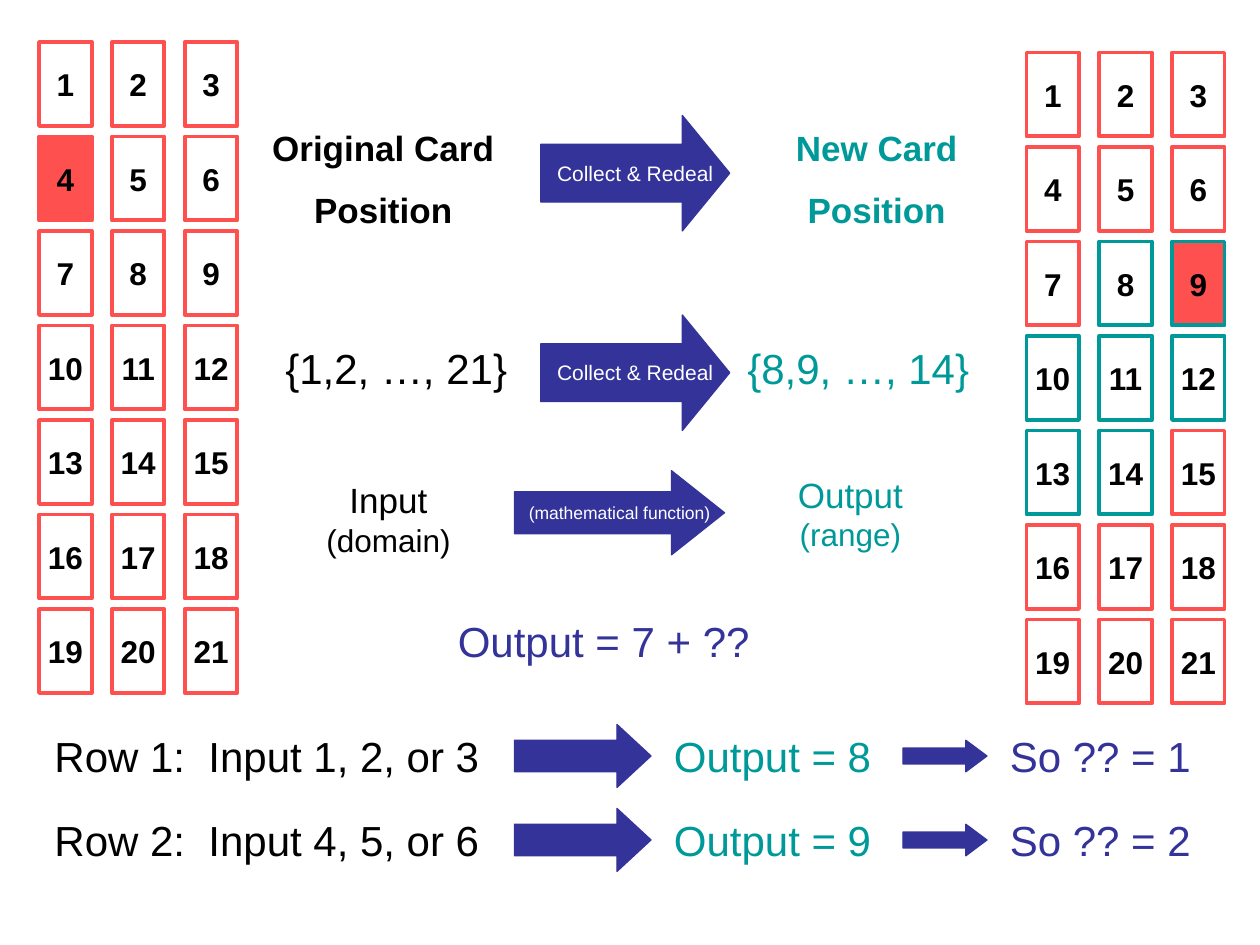
from pptx import Presentation
from pptx.dml.color import RGBColor
from pptx.enum import shapes, text
from pptx.util import Pt

BLACK, WHITE = "000000", "FFFFFF"
RED, TEAL, INDIGO = "FF5050", "009999", "333399"
LEFT, CENTER = text.PP_ALIGN.LEFT, text.PP_ALIGN.CENTER


def color(value):
    return RGBColor.from_string(value)


class Board:
    """Draws styled elements on one slide; all lengths are in points."""

    font = "Arial"
    card_width, card_height = 30, 48
    column_step, row_step = 41.6, 54

    def __init__(self, slide):
        self.slide = slide

    def shape(self, kind, left, top, width, height, fill, line, line_width):
        item = self.slide.shapes.add_shape(
            kind, Pt(left), Pt(top), Pt(width), Pt(height))
        item.shadow.inherit = False
        if fill:
            item.fill.solid()
            item.fill.fore_color.rgb = color(fill)
        else:
            item.fill.background()
        item.line.color.rgb = color(line)
        item.line.width = Pt(line_width)
        return item

    def arrow(self, left, top, width, height, head):
        item = self.shape(shapes.MSO_SHAPE.RIGHT_ARROW, left, top, width, height,
                          INDIGO, INDIGO, 0.75)
        item.adjustments[0] = 0.5
        item.adjustments[1] = head

    def label(self, left, top, width, height, paragraphs, sizes, ink=BLACK,
              bold=False, align=CENTER):
        """Add text; sizes go to the runs that line breaks (\\v) separate."""
        box = self.slide.shapes.add_textbox(
            Pt(left), Pt(top), Pt(width), Pt(height))
        frame = box.text_frame
        frame.text = "\n".join(paragraphs)
        frame.word_wrap = True
        frame.auto_size = text.MSO_AUTO_SIZE.SHAPE_TO_FIT_TEXT
        for index, para in enumerate(frame.paragraphs):
            para.alignment = align
            if index:
                para.space_before = Pt(0.57 * sizes[0])
            for span, size in zip(para.runs, sizes):
                span.font.name = self.font
                span.font.size = Pt(size)
                span.font.bold = bold
                span.font.color.rgb = color(ink)

    def cards(self, left, top, chosen, outlined=()):
        """Deal 21 numbered cards in seven rows of three."""
        for number in range(1, 22):
            row, column = divmod(number - 1, 3)
            x = left + column * self.column_step
            y = top + row * self.row_step
            self.shape(shapes.MSO_SHAPE.RECTANGLE, x, y,
                       self.card_width, self.card_height,
                       RED if number == chosen else None,
                       TEAL if number in outlined else RED, 2.25)
            self.label(x - 4.5, y + 9.75, 39, 29, [str(number)], [18], bold=True)


def main():
    deck = Presentation()
    deck.slide_width, deck.slide_height = Pt(720), Pt(540)
    board = Board(deck.slides.add_slide(deck.slide_layouts[6]))

    board.cards(22.4, 24, chosen=4)
    board.cards(586.6, 30, chosen=9, outlined=range(8, 15))

    # Card positions before and after the deal
    for left, heading, ink in ((144, "Original Card", BLACK), (426, "New Card", TEAL)):
        board.label(left, 69, 150, 67, [heading, "Position"], [20], ink, bold=True)
    for left, members, ink in ((156, "{1,2, …, 21}", BLACK), (420, "{8,9, …, 14}", TEAL)):
        board.label(left, 192, 144, 36, [members], [24], ink, align=LEFT)
    for top in (66, 180):
        board.arrow(309, top, 108, 66, 0.41)
        board.label(300, top + 22, 126, 22, ["Collect & Redeal"], [12], WHITE)

    # The deal as a function
    board.label(168, 270, 108, 53, ["Input\v(domain)"], [20, 18])
    board.label(432, 267, 108, 53, ["Output\v(range)"], [20, 18], TEAL)
    board.arrow(294, 269, 120, 48, 0.63)
    board.label(282, 283.5, 144, 19, ["(mathematical function)"], [10], WHITE)
    board.label(240, 348, 210, 36, ["Output = 7 + ??"], [24], INDIGO)

    # Worked rows
    examples = (("Row 1:  Input 1, 2, or 3", "Output = 8", "So ?? = 1"),
                ("Row 2:  Input 4, 5, or 6", "Output = 9", "So ?? = 2"))
    for index, (given, output, result) in enumerate(examples):
        top = 414 + index * 48
        board.label(24, top, 264, 36, [given], [24], align=LEFT)
        board.arrow(294, top, 78, 36, 0.54)
        board.label(378, top, 132, 36, [output], [24], TEAL, align=LEFT)
        board.arrow(516, top + 9, 48, 18, 0.67)
        board.label(570, top, 132, 36, [result], [24], INDIGO, align=LEFT)

    deck.save("out.pptx")


if __name__ == "__main__":
    main()
